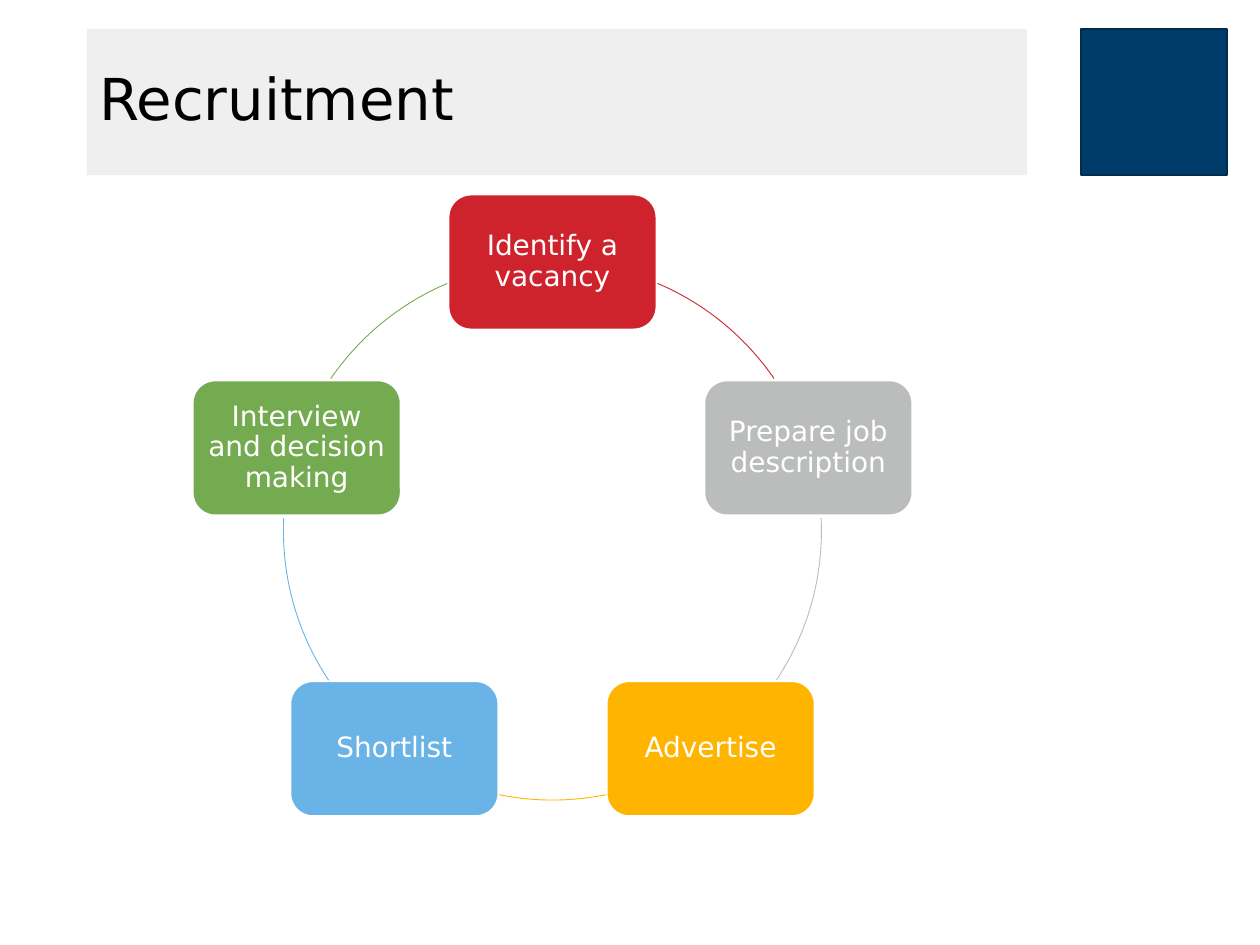
from math import cos, radians, sin

from pptx import Presentation
from pptx.dml.color import RGBColor
from pptx.enum.shapes import MSO_SHAPE as SHAPE
from pptx.enum.text import MSO_ANCHOR as ANCHOR, PP_ALIGN as ALIGN
from pptx.util import Inches, Pt

WHITE = RGBColor(0xFF, 0xFF, 0xFF)
BLACK = RGBColor(0x00, 0x00, 0x00)
NAVY = RGBColor(0x00, 0x3C, 0x69)
DARK_NAVY = RGBColor(0x00, 0x2C, 0x4E)
PALE_GRAY = RGBColor(0xEF, 0xEF, 0xF0)
RED = RGBColor(0xCE, 0x22, 0x2C)
GRAY = RGBColor(0xBB, 0xBC, 0xBC)
AMBER = RGBColor(0xFF, 0xB5, 0x00)
BLUE = RGBColor(0x69, 0xB3, 0xE7)
GREEN = RGBColor(0x74, 0xAA, 0x50)

COLS, ROWS = 100, 75
RING_X, RING_Y, RING_R = 43.85, 42.15, 21.35
STEP_W, STEP_H = 16.5, 10.7

STEPS = [
    ("Identify a vacancy", RED, -67, -34.5),
    ("Prepare job description", GRAY, -2.8, 33.7),
    ("Advertise", AMBER, 78.5, 101.5),
    ("Shortlist", BLUE, 146.3, 182.8),
    ("Interview and decision making", GREEN, 214.5, 247),
]


def write(sp, text, size=16, color=WHITE, align=ALIGN.CENTER, inset=0.07):
    tf = sp.text_frame
    tf.word_wrap = True
    tf.vertical_anchor = ANCHOR.MIDDLE
    tf.margin_left = tf.margin_right = Inches(inset)
    tf.margin_top = tf.margin_bottom = Inches(0.05)
    p = tf.paragraphs[0]
    p.alignment = align
    p.line_spacing = 0.9
    r = p.add_run()
    r.text = text
    r.font.name = "DejaVu Sans"
    r.font.size = Pt(size)
    r.font.color.rgb = color


class Deck:
    def __init__(self):
        self.prs = Presentation()
        self.prs.slide_width, self.prs.slide_height = Inches(10), Inches(7.5)
        self.s = self.prs.slides.add_slide(self.prs.slide_layouts[6])

    def shape(self, kind, x, y, w, h, fill=None, line=None, width=1):
        col, row = self.prs.slide_width / COLS, self.prs.slide_height / ROWS
        sp = self.s.shapes.add_shape(
            kind, round(x * col), round(y * row), round(w * col), round(h * row))
        sp.shadow.inherit = False
        if fill is None:
            sp.fill.background()
        else:
            sp.fill.solid()
            sp.fill.fore_color.rgb = fill
        if line is None:
            sp.line.fill.background()
        else:
            sp.line.color.rgb = line
            sp.line.width = Pt(width)
        return sp

    def title(self, text):
        sp = self.shape(SHAPE.RECTANGLE, 6.9, 2.3, 74.6, 11.6, PALE_GRAY)
        write(sp, text, size=33, color=BLACK, align=ALIGN.LEFT, inset=0.1)

    def step(self, text, angle, color):
        x = RING_X + RING_R * cos(radians(angle))
        y = RING_Y + RING_R * sin(radians(angle))
        sp = self.shape(SHAPE.ROUNDED_RECTANGLE, x - STEP_W / 2, y - STEP_H / 2,
                        STEP_W, STEP_H, color, WHITE)
        write(sp, text)

    def arc(self, start, end, color):
        sp = self.shape(SHAPE.ARC, RING_X - RING_R, RING_Y - RING_R,
                        2 * RING_R, 2 * RING_R, line=color, width=0.5)
        for i, angle in enumerate((start, end)):
            sp.adjustments[i] = angle % 360 * 0.6


def main():
    deck = Deck()
    deck.shape(SHAPE.RECTANGLE, 85.8, 2.3, 11.6, 11.6, NAVY, DARK_NAVY)
    deck.title("Recruitment")
    for i, (text, color, start, end) in enumerate(STEPS):
        deck.step(text, i * 360 / len(STEPS) - 90, color)
        deck.arc(start, end, color)
    deck.prs.save("out.pptx")


if __name__ == "__main__":
    main()
